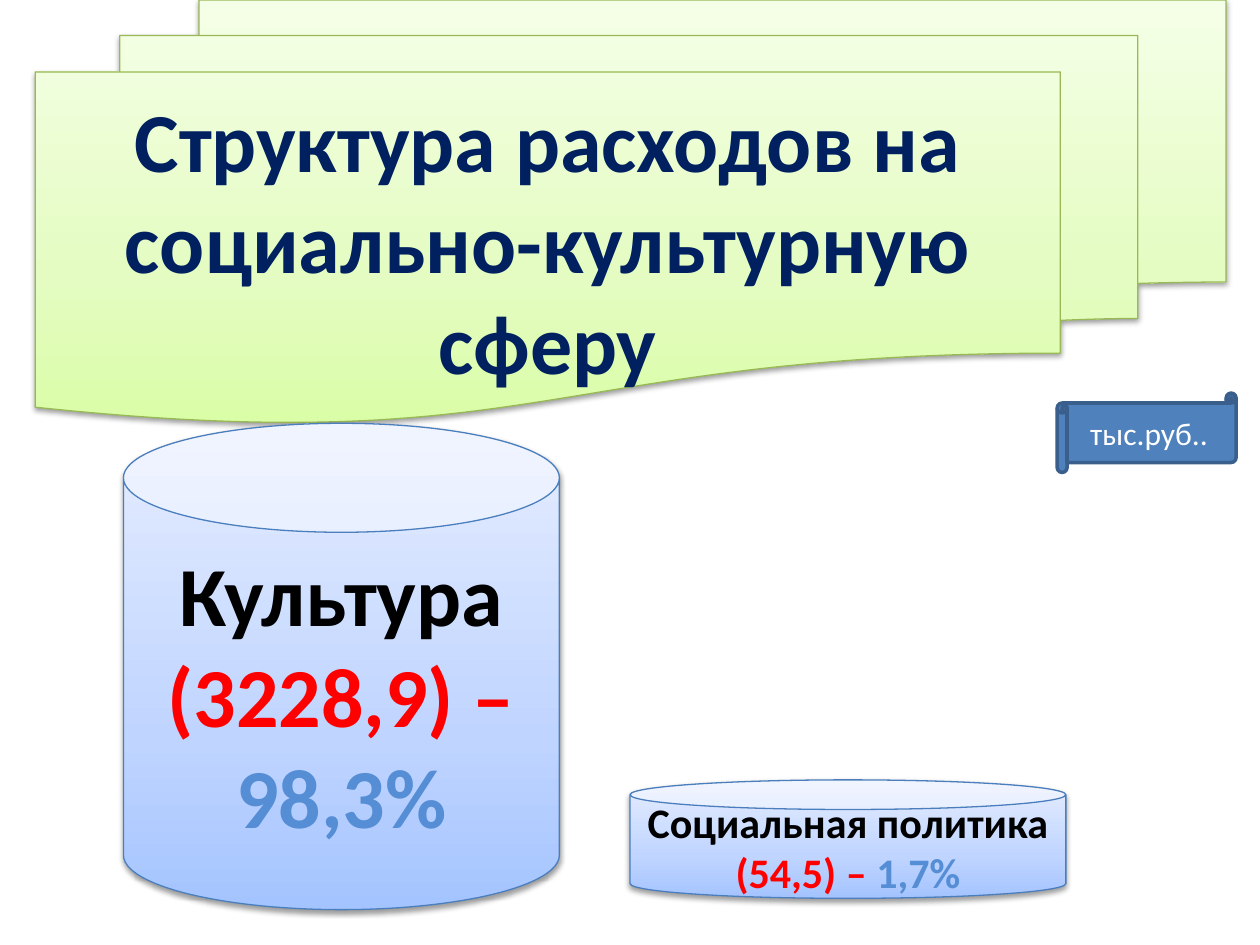
"""Build the slide on the structure of social and cultural spending."""
from copy import deepcopy
from dataclasses import dataclass

from lxml import etree
from pptx import Presentation
from pptx.dml.color import RGBColor
from pptx.enum.shapes import MSO_SHAPE
from pptx.enum.text import MSO_ANCHOR, MSO_AUTO_SIZE, PP_ALIGN
from pptx.oxml.ns import qn
from pptx.util import Pt

CAN = MSO_SHAPE.CAN
DOCUMENTS = MSO_SHAPE.FLOWCHART_MULTIDOCUMENT
SCROLL = MSO_SHAPE.HORIZONTAL_SCROLL
CENTER = PP_ALIGN.CENTER
MIDDLE = MSO_ANCHOR.MIDDLE
NO_AUTOFIT = MSO_AUTO_SIZE.NONE

FONT = "Calibri"
TITLE_LAYOUT = 5
NAVY = RGBColor(0x00, 0x20, 0x60)
BLACK = RGBColor(0x00, 0x00, 0x00)
RED = RGBColor(0xFF, 0x00, 0x00)
WHITE = RGBColor(0xFF, 0xFF, 0xFF)
SHARE_BLUE = RGBColor(0x55, 0x8E, 0xD5)
SCROLL_FILL = RGBColor(0x4F, 0x81, 0xBD)
SCROLL_LINE = RGBColor(0x3A, 0x5F, 0x8C)
GREEN_LINE = RGBColor(0x98, 0xB9, 0x55)
BLUE_LINE = RGBColor(0x4B, 0x7E, 0xBC)
GREENS = (RGBColor(0xDA, 0xFD, 0xA7), RGBColor(0xE4, 0xFC, 0xC2), RGBColor(0xF5, 0xFF, 0xE7))
BLUES = (RGBColor(0xA4, 0xC4, 0xFF), RGBColor(0xBF, 0xD4, 0xFF), RGBColor(0xE6, 0xEE, 0xFF))
STOP_POSITIONS = (0, 0.35, 1)


@dataclass(frozen=True)
class Box:
    left: float
    top: float
    width: float
    height: float


@dataclass(frozen=True)
class Expense:
    box: Box
    name: str
    amount: str
    share: str
    size: float


DOCUMENTS_BOX = Box(20.16, 0, 680.4, 241.92)
TITLE_BOX = Box(20.16, 41.16, 585.74, 191.6)
UNIT_BOX = Box(604.08, 224.64, 102.24, 45.36)
EXPENSES = (
    Expense(Box(360, 445.68, 249.12, 67.68), "Социальная политика ", "(54,5) – ", "1,7%", 24),
    Expense(Box(70.56, 241.92, 249.12, 277.92), "Культура ", "(3228,9) – ", "98,3%", 48),
)


def place(shape, box: Box) -> None:
    """Move and size a shape."""
    shape.left, shape.top = Pt(box.left), Pt(box.top)
    shape.width, shape.height = Pt(box.width), Pt(box.height)


def add_shape(slide, kind, box: Box):
    """Add a preset shape at a box."""
    return slide.shapes.add_shape(kind, Pt(box.left), Pt(box.top), Pt(box.width), Pt(box.height))


def set_outline(shape, color: RGBColor, width: float) -> None:
    """Colour the outline of a shape."""
    shape.line.color.rgb = color
    shape.line.width = Pt(width)


def set_gradient(shape, colors: tuple[RGBColor, ...]) -> None:
    """Fill a shape with a vertical gradient of three colours."""
    shape.fill.gradient()
    shape.fill.gradient_angle = 90
    stop_list = shape.element.spPr.find(".//" + qn("a:gsLst"))
    stop_list.append(deepcopy(stop_list[0]))
    for stop, color, position in zip(shape.fill.gradient_stops, colors, STOP_POSITIONS):
        stop.color.rgb = color
        stop.position = position


def set_shadow(shape) -> None:
    """Give a shape a soft shadow below it."""
    shape.shadow.inherit = False
    effects = shape.element.spPr.find(qn("a:effectLst"))
    shadow = etree.SubElement(effects, qn("a:outerShdw"), blurRad=str(Pt(3.1)),
                              dist=str(Pt(1.6)), dir="5400000", rotWithShape="0")
    color = etree.SubElement(shadow, qn("a:srgbClr"), val="000000")
    etree.SubElement(color, qn("a:alpha"), val="38000")


def add_glossy_shape(slide, kind, box: Box, colors: tuple[RGBColor, ...], outline: RGBColor):
    """Add a shape with a gradient, a thin outline and a shadow."""
    shape = add_shape(slide, kind, box)
    set_gradient(shape, colors)
    set_outline(shape, outline, 0.75)
    set_shadow(shape)
    return shape


def write_text(shape, runs: tuple[tuple[str, RGBColor], ...], size: float, bold: bool) -> None:
    """Write one centred paragraph of coloured runs."""
    frame = shape.text_frame
    frame.word_wrap = True
    frame.auto_size = NO_AUTOFIT
    frame.vertical_anchor = MIDDLE
    paragraph = frame.paragraphs[0]
    paragraph.alignment = CENTER
    for text, color in runs:
        run = paragraph.add_run()
        run.text = text
        run.font.name = FONT
        run.font.size = Pt(size)
        run.font.bold = bold
        run.font.color.rgb = color


def draw_title(slide) -> None:
    """Draw the stack of documents with the title on its front page."""
    title = slide.shapes.title
    documents = add_glossy_shape(slide, DOCUMENTS, DOCUMENTS_BOX, GREENS, GREEN_LINE)
    title.element.addprevious(documents.element)
    place(title, TITLE_BOX)
    write_text(title, (("Структура расходов на социально-культурную сферу", NAVY),), 48, True)


def draw_expense(slide, expense: Expense) -> None:
    """Draw a cylinder with its name, amount and share."""
    shape = add_glossy_shape(slide, CAN, expense.box, BLUES, BLUE_LINE)
    runs = ((expense.name, BLACK), (expense.amount, RED), (expense.share, SHARE_BLUE))
    write_text(shape, runs, expense.size, True)


def draw_unit(slide) -> None:
    """Draw the scroll that names the unit."""
    shape = add_shape(slide, SCROLL, UNIT_BOX)
    shape.fill.solid()
    shape.fill.fore_color.rgb = SCROLL_FILL
    set_outline(shape, SCROLL_LINE, 2)
    shape.shadow.inherit = False
    write_text(shape, (("тыс.руб..", WHITE),), 18, False)


def main() -> None:
    """Create and save the presentation."""
    presentation = Presentation()
    presentation.slide_width, presentation.slide_height = Pt(720), Pt(540)
    slide = presentation.slides.add_slide(presentation.slide_layouts[TITLE_LAYOUT])
    draw_title(slide)
    for expense in EXPENSES:
        draw_expense(slide, expense)
    draw_unit(slide)
    presentation.save("out.pptx")


if __name__ == "__main__":
    main()
